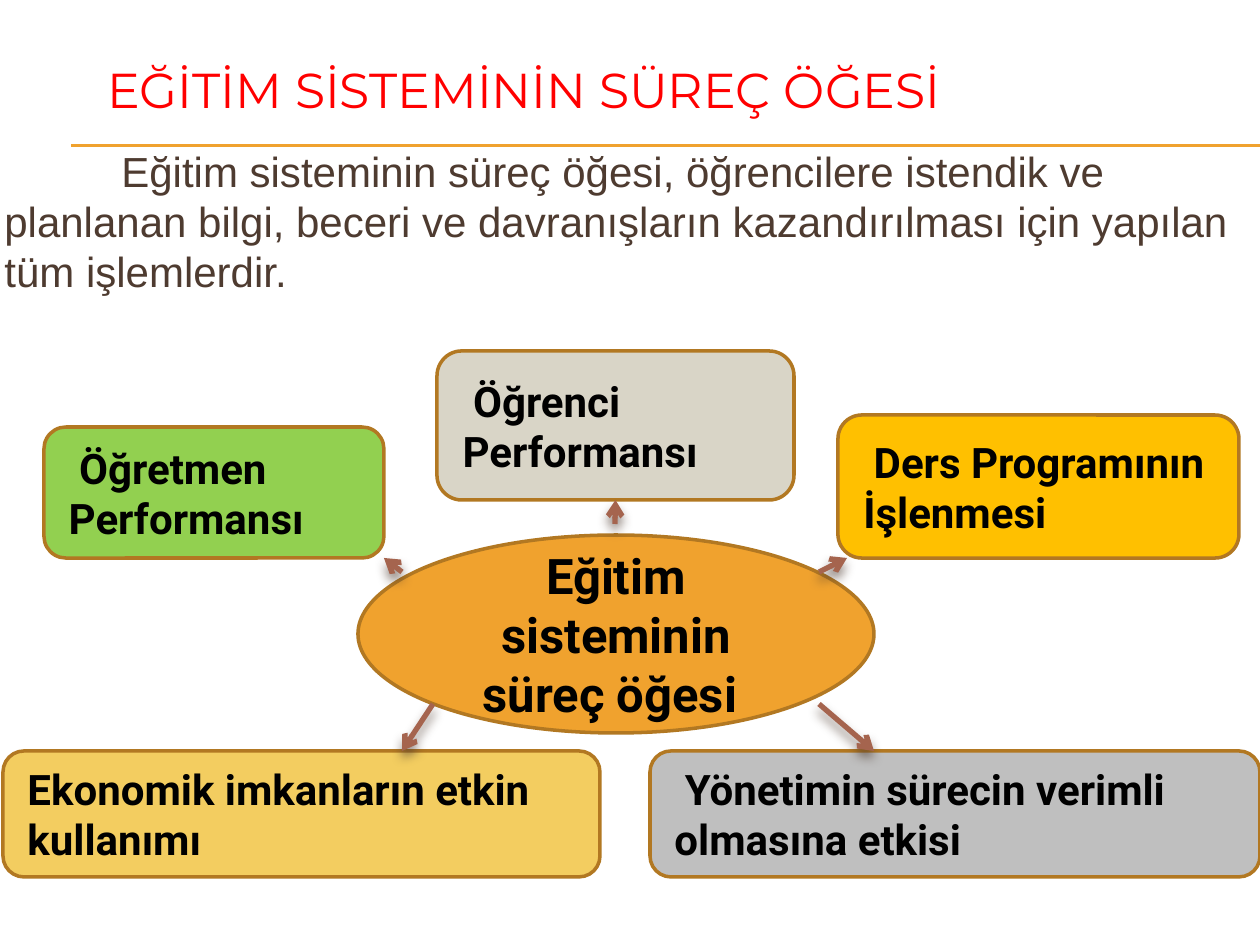
"""Slide on the process element of the education system and its five factors."""
from lxml.etree import SubElement
from pptx import Presentation
from pptx.dml.color import RGBColor
from pptx.enum.shapes import MSO_CONNECTOR, MSO_SHAPE
from pptx.enum.text import MSO_ANCHOR, PP_ALIGN
from pptx.oxml.ns import qn
from pptx.util import Pt

PX = 914400 / 126
COLORS = {
    "title": "FF0000", "body": "4E3B30", "label": "000000", "rule": "F0A22E",
    "border": "B27822", "arrow": "A5644E", "shadow": "4E3B30",
    "orange": "F0A22E", "sand": "D9D5C7", "green": "92D050",
    "amber": "FFC000", "yellow": "F3CD60", "gray": "BFBFBF",
}
TITLE = "EĞİTİM SİSTEMİNİN SÜREÇ ÖĞESİ"
DEFINITION = ("Eğitim sisteminin süreç öğesi, öğrencilere istendik ve planlanan bilgi, "
              "beceri ve davranışların kazandırılması için yapılan tüm işlemlerdir.")
CENTER = ("Eğitim sisteminin süreç öğesi ", "orange", (358, 535, 516, 198))
FACTORS = [
    (" Öğrenci Performansı", "sand", (437, 351, 357, 149)),
    (" Öğretmen Performansı", "green", (44, 427, 340, 131)),
    (" Ders Programının İşlenmesi", "amber", (838, 415, 401, 143)),
    ("Ekonomik imkanların etkin kullanımı", "yellow", (3, 751, 597, 126)),
    (" Yönetimin sürecin verimli olmasına etkisi", "gray", (650, 751, 610, 126)),
]
ARROWS = [
    (615, 524, 615, 500),
    (402, 572, 384, 558),
    (819, 572, 847, 558),
    (433, 704, 402, 751),
    (819, 704, 874, 751),
]
RULES = [(71, 145, 1260, 145), (71, 146, 1260, 146)]


def emu(lengths):
    return [round(length * PX) for length in lengths]


def rgb(name):
    return RGBColor.from_string(COLORS[name])


def write(shape, text, font, size, color, bold=False, anchor=MSO_ANCHOR.MIDDLE,
          align=PP_ALIGN.LEFT, margin=0, indent=0):
    frame = shape.text_frame
    frame.text = text
    frame.word_wrap = True
    frame.vertical_anchor = anchor
    paragraph = frame.paragraphs[0]
    paragraph.alignment = align
    properties = paragraph._p.get_or_add_pPr()
    properties.set("marL", str(round(margin * PX)))
    properties.set("indent", str(round(indent * PX)))
    run_font = paragraph.runs[0].font
    run_font.name, run_font.size, run_font.bold = font, Pt(size), bold
    run_font.color.rgb = rgb(color)
    return paragraph


def add_node(slide, kind, text, fill, box, size, **layout):
    node = slide.shapes.add_shape(kind, *emu(box))
    node.shadow.inherit = False
    node.fill.solid()
    node.fill.fore_color.rgb = rgb(fill)
    node.line.color.rgb = rgb("border")
    node.line.width = Pt(2)
    write(node, text, "Roboto", size, "label", bold=True, **layout)
    return node


def add_line(slide, ends, color, width):
    line = slide.shapes.add_connector(MSO_CONNECTOR.STRAIGHT, *emu(ends))
    line.line.color.rgb = rgb(color)
    line.line.width = Pt(width)
    return line, SubElement(line._element.spPr, qn("a:effectLst"))


def add_arrow(slide, ends):
    arrow, effects = add_line(slide, ends, "arrow", 3)
    SubElement(arrow.line._get_or_add_ln(), qn("a:tailEnd"), type="arrow")
    shadow = SubElement(effects, qn("a:outerShdw"), blurRad=str(Pt(6)), dist=str(Pt(4)),
                        dir="5400000", rotWithShape="0")
    tint = SubElement(shadow, qn("a:srgbClr"), val=COLORS["shadow"])
    SubElement(tint, qn("a:alpha"), val="60000")
    return arrow


def main():
    deck = Presentation()
    deck.slide_width, deck.slide_height = emu((1260, 945))
    slide = deck.slides.add_slide(deck.slide_layouts[6])

    for ends in RULES:
        add_line(slide, ends, "rule", 0.75)

    title = slide.shapes.add_textbox(*emu((95, 26, 1058, 125)))
    write(title, TITLE, "Montserrat", 28, "title")
    definition = slide.shapes.add_textbox(*emu((-14, 139, 1260, 770)))
    paragraph = write(definition, DEFINITION, "Arial", 24, "body",
                      anchor=MSO_ANCHOR.TOP, margin=6, indent=117)
    paragraph.space_before = Pt(5)

    add_node(slide, MSO_SHAPE.OVAL, *CENTER, 28, align=PP_ALIGN.CENTER)
    factors = [add_node(slide, MSO_SHAPE.ROUNDED_RECTANGLE, *factor, 24, margin=6)
               for factor in FACTORS]
    arrows = [add_arrow(slide, ends) for ends in ARROWS]
    arrows[0].end_connect(factors[0], 2)
    deck.save("out.pptx")


if __name__ == "__main__":
    main()
